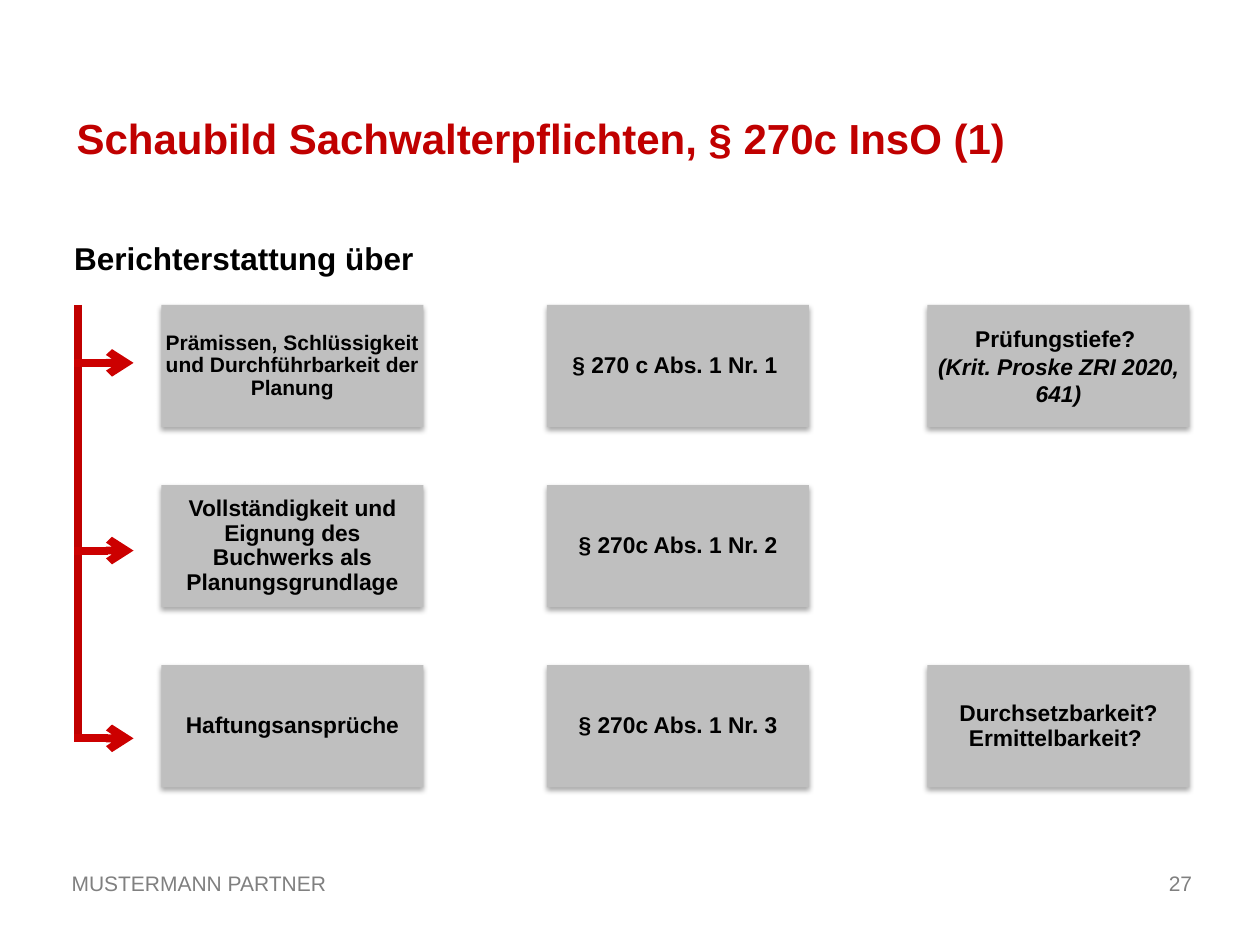
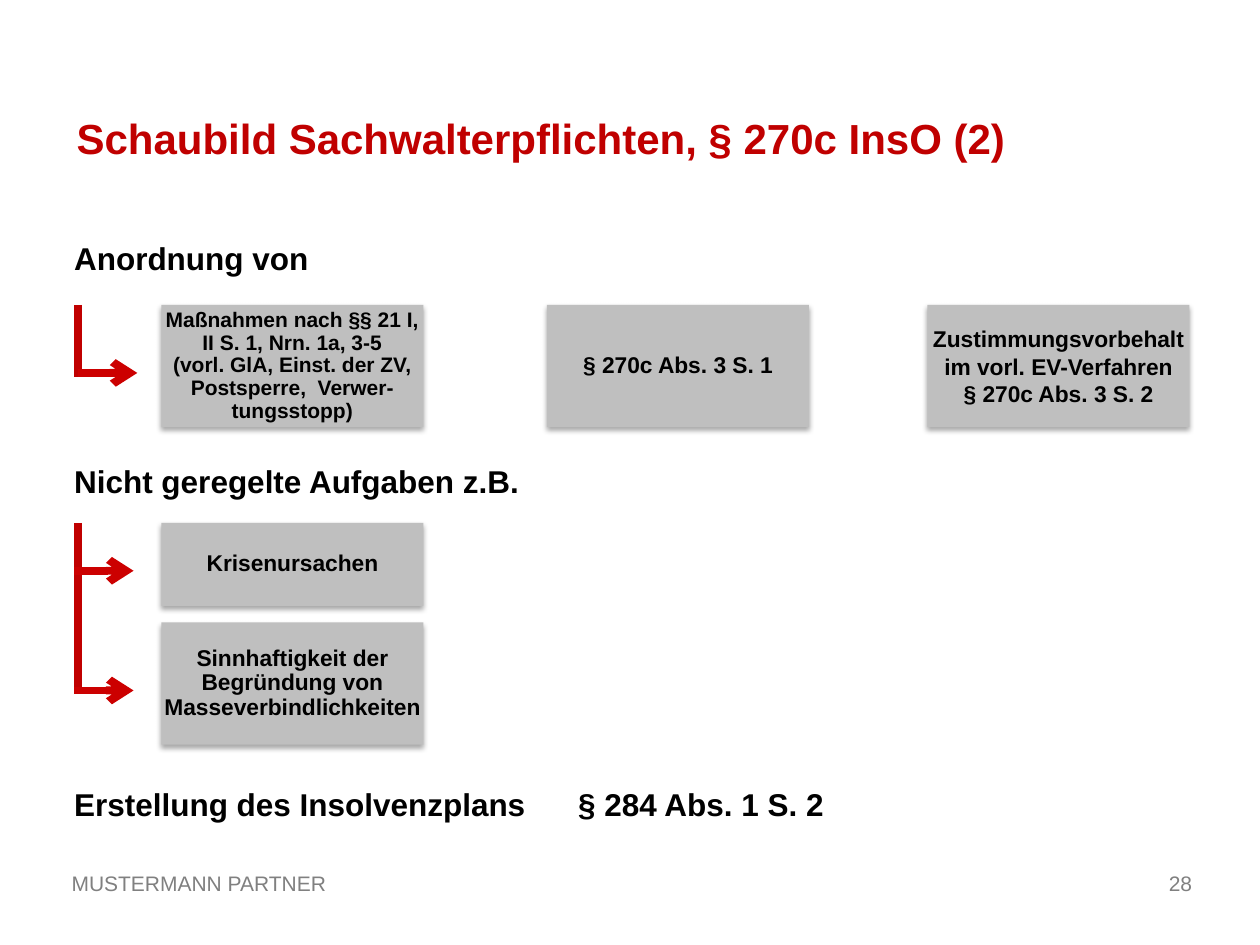
from lxml import etree
from pptx import Presentation
from pptx.dml.color import RGBColor
from pptx.enum.shapes import MSO_CONNECTOR as Connector, MSO_SHAPE as Shape
from pptx.enum.text import MSO_ANCHOR as Anchor, MSO_AUTO_SIZE as AutoSize, PP_ALIGN as Align
from pptx.oxml.ns import qn
from pptx.util import Inches, Pt

RED, ARROW_RED = "C00000", "CC0000"
BLACK, GRAY, BOX_GRAY, WHITE = "000000", "808080", "BFBFBF", "FFFFFF"

FIRM = "MUSTERMANN PARTNER"
FIRST_PAGE = 27

COLUMNS = (1.28, 4.34, 7.36)
FIRST_ROW, ROW_STEP = 2.42, 1.43
BOX_WIDTH, BOX_HEIGHT = 2.08, 0.97
STEM_X, STEM_OVERLAP, ARROW_LENGTH = 0.62, 0.03, 0.47


def color(hex_string):
    return RGBColor.from_string(hex_string)


def apply_format(target, values):
    for name, value in values.items():
        setattr(target, name, value)


class SlideBuilder:
    """Holds the shared style and the slide being built."""

    title_format = {"size": Pt(24), "bold": True}
    heading_format = {"size": Pt(18), "bold": True}
    box_format = {"size": Pt(13), "bold": True}
    footer_format = {"size": Pt(12)}
    box_frame = {"vertical_anchor": Anchor.MIDDLE} | {
        f"margin_{side}": Inches(0.01) for side in ("left", "top", "right", "bottom")}

    def __init__(self):
        self.presentation = Presentation()
        self.presentation.slide_width = Inches(10)
        self.presentation.slide_height = Inches(7.5)
        self.slide = None

    def start_slide(self, title, page):
        layout = self.presentation.slide_layouts[6]
        self.slide = self.presentation.slides.add_slide(layout)
        self.footer(FIRM, 0.47, 6.9, 2.83, 0.26, {"line_spacing": 0.8}, {})
        self.footer(str(page), 8.99, 6.75, 0.57, 0.52, {"alignment": Align.RIGHT},
                    {"vertical_anchor": Anchor.MIDDLE})
        self.text_line(title, 0.51, 0.84, 0.5, self.title_format, RED)

    def set_text(self, shape, lines, font_values, font_color, paragraph_values, frame_values):
        """Put one paragraph per line into the shape."""
        frame = shape.text_frame
        apply_format(frame, {"word_wrap": True} | frame_values)
        for index, line in enumerate(lines):
            paragraph = frame.add_paragraph() if index else frame.paragraphs[0]
            apply_format(paragraph, paragraph_values)
            run = paragraph.add_run()
            run.text = line
            apply_format(run.font, {"name": "Arial"} | font_values)
            run.font.color.rgb = color(font_color)

    def rectangle(self, left, top, width, height, fill):
        shape = self.slide.shapes.add_shape(
            Shape.RECTANGLE, Inches(left), Inches(top), Inches(width), Inches(height))
        shape.shadow.inherit = False
        shape.fill.solid()
        shape.fill.fore_color.rgb = color(fill)
        shape.line.fill.background()
        return shape

    def footer(self, text, left, top, width, height, paragraph_values, frame_values):
        shape = self.rectangle(left, top, width, height, WHITE)
        paragraph_values = {"alignment": Align.LEFT} | paragraph_values
        frame_values = {"vertical_anchor": Anchor.TOP} | frame_values
        self.set_text(shape, [text], self.footer_format, GRAY, paragraph_values, frame_values)

    def text_line(self, text, left, top, height, font_values, font_color):
        shape = self.slide.shapes.add_textbox(
            Inches(left), Inches(top), Inches(9.16), Inches(height))
        self.set_text(shape, [text], font_values, font_color, {},
                      {"auto_size": AutoSize.SHAPE_TO_FIT_TEXT})

    def heading(self, text, top):
        self.text_line(text, 0.49, top, 0.4, self.heading_format, BLACK)

    def box(self, lines, column=0, top=FIRST_ROW, height=BOX_HEIGHT, size=13, spacing=0.9):
        shape = self.rectangle(COLUMNS[column], top, BOX_WIDTH, height, BOX_GRAY)
        self.add_shadow(shape)
        self.set_text(shape, lines, self.box_format | {"size": Pt(size)}, BLACK,
                      {"alignment": Align.CENTER, "line_spacing": spacing}, self.box_frame)
        return shape

    def add_shadow(self, shape):
        effects = shape.element.spPr.find(qn("a:effectLst"))
        shadow = etree.SubElement(effects, qn("a:outerShdw"), blurRad=str(Pt(3.1)),
                                  dist=str(Pt(1.8)), dir="5400000", rotWithShape="0")
        shade = etree.SubElement(shadow, qn("a:srgbClr"), val=BLACK)
        etree.SubElement(shade, qn("a:alpha"), val="35000")

    def line(self, start, end, line_color):
        points = [Inches(value) for value in (*start, *end)]
        connector = self.slide.shapes.add_connector(Connector.STRAIGHT, *points)
        connector.line.color.rgb = color(line_color)
        connector.line.width = Pt(4.5)
        etree.SubElement(connector.element.spPr, qn("a:effectLst"))
        return connector

    def branches(self, top, arrow_tops, arrow_left=0.59):
        """Draw a stem from top to the last arrow, with an arrow at each height."""
        self.line((STEM_X, top), (STEM_X, arrow_tops[-1] + STEM_OVERLAP), RED)
        for arrow_top in arrow_tops:
            arrow = self.line((arrow_left, arrow_top),
                              (arrow_left + ARROW_LENGTH, arrow_top), ARROW_RED)
            outline = arrow.element.spPr.find(qn("a:ln"))
            etree.SubElement(outline, qn("a:tailEnd"), type="arrow")


def build_reporting(builder):
    builder.start_slide("Schaubild Sachwalterpflichten, § 270c InsO (1)", FIRST_PAGE)
    builder.heading("Berichterstattung über", 1.85)
    duties = (
        ("Prämissen, Schlüssigkeit und Durchführbarkeit der Planung", "§ 270 c Abs. 1 Nr. 1 "),
        ("Vollständigkeit und Eignung des Buchwerks als Planungsgrundlage",
         "§ 270c Abs. 1 Nr. 2"),
        ("Haftungsansprüche", "§ 270c Abs. 1 Nr. 3"),
    )
    for row, (duty, rule) in enumerate(duties):
        top = FIRST_ROW + row * ROW_STEP
        builder.box([duty], 0, top, size=13 if row else 12)
        builder.box([rule], 1, top)
    depth = builder.box(["Prüfungstiefe? ", "(Krit. Proske ZRI 2020, 641)"], 2, spacing=1.0)
    depth.text_frame.paragraphs[1].runs[0].font.italic = True
    builder.box(["Durchsetzbarkeit? Ermittelbarkeit? "], 2, FIRST_ROW + 2 * ROW_STEP)
    builder.branches(FIRST_ROW, [2.88 + row * 1.49 for row in range(3)])


def build_orders(builder):
    builder.start_slide("Schaubild Sachwalterpflichten, § 270c InsO (2)", FIRST_PAGE + 1)
    builder.heading("Anordnung von", 1.85)
    builder.box(["Maßnahmen nach §§ 21 I, II S. 1, Nrn. 1a, 3-5",
                 "(vorl. GlA, Einst. der ZV, Postsperre,  Verwer-tungsstopp)"], size=12)
    builder.box(["§ 270c Abs. 3 S. 1"], 1)
    builder.box(["Zustimmungsvorbehalt im vorl. EV-Verfahren", "§ 270c Abs. 3 S. 2"],
                2, spacing=1.0)
    builder.branches(FIRST_ROW, [2.96], arrow_left=STEM_X)

    builder.heading("Nicht geregelte Aufgaben z.B.", 3.62)
    builder.box(["Krisenursachen"], top=4.15, height=0.66)
    builder.box(["Sinnhaftigkeit der Begründung von Masseverbindlichkeiten"], top=4.94)
    builder.branches(4.15, [4.53, 5.48])

    builder.heading("Erstellung des Insolvenzplans\t§ 284 Abs. 1 S. 2", 6.18)


def main():
    builder = SlideBuilder()
    build_reporting(builder)
    build_orders(builder)
    builder.presentation.save("out.pptx")


if __name__ == "__main__":
    main()
